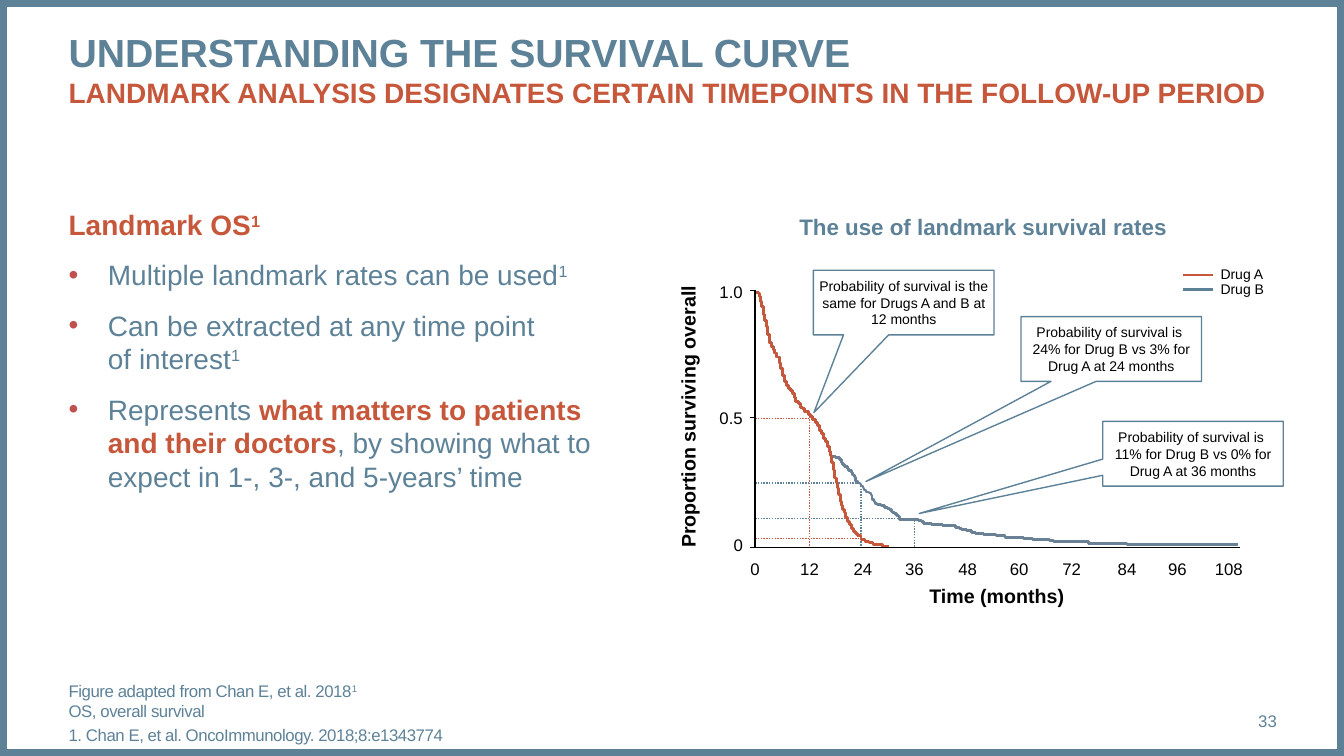
from dataclasses import dataclass
from itertools import chain

from lxml.etree import SubElement
from pptx import Presentation
from pptx.dml.color import RGBColor
from pptx.enum.dml import MSO_LINE
from pptx.enum.shapes import MSO_CONNECTOR, MSO_SHAPE
from pptx.enum.text import MSO_ANCHOR, PP_ALIGN
from pptx.oxml.ns import qn
from pptx.util import Cm, Pt


@dataclass(frozen=True)
class Theme:
    font: str = "Arial"
    blue: str = "5D8298"
    red: str = "C6573B"
    curve_blue: str = "698095"
    bullet: str = "C0504D"
    black: str = "000000"
    white: str = "FFFFFF"
    title: int = 28
    body: int = 20
    chart_title: int = 16
    axis_title: int = 14
    small: int = 12
    note: int = 10


THEME = Theme()
STRONG = {"bold": True, "color": THEME.red}
SUPER = ("1", {"raised": True})

# A paragraph is a list of runs; a run is (text, format changes).
TITLE = [[("UNDERSTANDING THE SURVIVAL CURVE\n", {}),
          ("LANDMARK ANALYSIS DESIGNATES CERTAIN TIMEPOINTS IN THE FOLLOW-UP PERIOD",
           {"size": THEME.body, "color": THEME.red})]]
BODY = [
    [("Landmark OS", STRONG), ("1", {**STRONG, "raised": True})],
    [("Multiple landmark rates can be used", {}), SUPER],
    [("Can be extracted at any time point \nof interest", {}), SUPER],
    [("Represents ", {}), ("what matters to patients and their doctors", STRONG),
     (", by showing what to expect in 1-, 3-, and 5-years’ time", {})],
]
FOOTNOTES = [
    [("Figure adapted from Chan E, et al. 2018", {}), SUPER, ("\nOS, overall survival", {})],
    [("1. Chan E, et al. OncoImmunology. 2018;8:e1343774", {})],
]
PAGE_NUMBER = "33"
CHART_TITLE = "The use of landmark survival rates"
TIME_TITLE = "Time (months)"
SURVIVAL_TITLE = "Proportion surviving overall"

# Plot positions count in steps of PLOT_UNIT from the top of the survival axis.
PLOT_UNIT = 0.0254
PLOT_LEFT, PLOT_TOP = 19.03, 7.32
TIME_AXIS, SURVIVAL_AXIS = 481, 255
MONTHS = [(0, 0), (12, 54), (24, 107), (36, 158), (48, 211), (60, 262),
          (72, 314), (84, 369), (96, 419), (108, 470)]
SURVIVAL = [("1.0", 0, -6), ("0.5", 126, 119), ("0", 255, 245)]  # label, tick, label top
LEGEND = [("Drug A", THEME.red, -15), ("Drug B", THEME.blue, -1)]
GUIDES = [  # colour, start, end
    (THEME.red, (54, 253), (54, 124)),
    (THEME.red, (0, 127), (55, 127)),
    (THEME.red, (0, 246), (105, 246)),
    (THEME.blue, (0, 191), (103, 191)),
    (THEME.blue, (0, 226), (142, 226)),
    (THEME.blue, (105, 253), (105, 194)),
    (THEME.blue, (158, 254), (158, 226)),
]
# Each step runs level to the first number, then drops to the second.
CURVE_START = (1, 2)
SHARED_STEPS = [
    (3, 3), (4, 6), (5, 11), (6, 16), (8, 24), (9, 30), (11, 36), (12, 44), (14, 52),
    (16, 56), (18, 59), (19, 62), (21, 66), (24, 72), (25, 77), (27, 84), (29, 90),
    (31, 94), (33, 97), (35, 99), (37, 102), (39, 106), (40, 110), (43, 112), (45, 116),
    (47, 117), (49, 120), (53, 123), (55, 125), (57, 128), (60, 131), (62, 134),
    (64, 139), (66, 142), (68, 147), (70, 150), (72, 155), (74, 160), (75, 164)]
DRUG_A_STEPS = [
    (76, 171), (78, 178), (79, 186), (81, 191), (82, 196), (83, 202), (85, 209),
    (86, 213), (87, 217), (89, 220), (90, 225), (92, 229), (94, 232), (96, 236),
    (98, 239), (100, 241), (102, 243), (105, 247), (109, 249), (113, 250), (117, 252),
    (126, 254), (133, 254)]
DRUG_B_STEPS = [
    (76, 165), (80, 166), (84, 168), (86, 171), (87, 173), (89, 175), (92, 177),
    (93, 179), (96, 181), (97, 183), (99, 185), (100, 189), (102, 191), (104, 192),
    (105, 194), (107, 196), (108, 198), (110, 200), (113, 201), (115, 203), (116, 207),
    (118, 209), (119, 211), (121, 212), (125, 213), (128, 215), (131, 216), (133, 217),
    (135, 219), (136, 220), (138, 221), (140, 223), (142, 224), (143, 227), (162, 228),
    (165, 229), (167, 231), (175, 232), (186, 233), (199, 235), (203, 236), (205, 237),
    (210, 238), (215, 240), (219, 241), (227, 242), (239, 243), (248, 245), (266, 246),
    (275, 247), (292, 248), (296, 249), (331, 251), (369, 252), (479, 252)]
CALLOUTS = [  # text, left, top, pointer
    ("Probability of survival is the same for Drugs A and B at 12 months",
     20.5, 6.81, (-0.497, 1.701)),
    ("Probability of survival is \n24% for Drug B vs 3% for Drug A at 24 months",
     25.73, 7.98, (-1.359, 2.049)),
    ("Probability of survival is \n11% for Drug B vs 0% for Drug A at 36 months",
     27.79, 10.62, (-1.517, 0.924)),
]

deck = Presentation()
deck.slide_width, deck.slide_height = Cm(33.87), Cm(19.05)
slide = deck.slides.add_slide(deck.slide_layouts[6])


def rgb(code):
    return RGBColor.from_string(code)


def plot_x(units):
    return PLOT_LEFT + units * PLOT_UNIT


def plot_y(units):
    return PLOT_TOP + units * PLOT_UNIT


def fill_text(frame, text, *, size, color=THEME.black, bold=False, align=PP_ALIGN.LEFT,
              anchor=MSO_ANCHOR.TOP, insets=(0, 0, 0, 0), leading=None,
              before=0, tracking=None, bulleted=False):
    """Write a string, or a list of paragraphs; bulleted skips the first one."""
    frame.word_wrap, frame.vertical_anchor = True, anchor
    frame.margin_left, frame.margin_top, frame.margin_right, frame.margin_bottom = map(Cm, insets)
    paragraphs = [[(text, {})]] if isinstance(text, str) else text
    for index, runs in enumerate(paragraphs):
        paragraph = frame.add_paragraph() if index else frame.paragraphs[0]
        paragraph.alignment, paragraph.space_before = align, Pt(before)
        if leading:
            paragraph.line_spacing = leading
        if bulleted and index:
            props = paragraph._p.get_or_add_pPr()
            props.set("marL", str(Cm(0.99)))
            props.set("indent", str(-Cm(0.99)))
            SubElement(SubElement(props, qn("a:buClr")), qn("a:srgbClr"), val=THEME.bullet)
            SubElement(props, qn("a:buFont"), typeface=THEME.font)
            SubElement(props, qn("a:buChar"), char="•")
        for words, changes in runs:
            for part, line in enumerate(words.split("\n")):
                if part:
                    paragraph.add_line_break()
                if not line:
                    continue
                run = paragraph.add_run()
                run.text = line
                run.font.name = THEME.font
                run.font.size = Pt(changes.get("size", size))
                run.font.bold = changes.get("bold", bold)
                run.font.color.rgb = rgb(changes.get("color", color))
                if changes.get("raised"):
                    run.font._element.set("baseline", "30000")
                if tracking:
                    run.font._element.set("spc", str(tracking))


def add_text(text, left, top, width, height, rotation=0, **style):
    box = slide.shapes.add_textbox(Cm(left), Cm(top), Cm(width), Cm(height))
    box.rotation = rotation
    fill_text(box.text_frame, text, **style)


def add_plot_line(start, end, color, weight=1, dash=None):
    ends = [Cm(place(units)) for point in (start, end)
            for place, units in zip((plot_x, plot_y), point)]
    line = slide.shapes.add_connector(MSO_CONNECTOR.STRAIGHT, *ends)
    line.line.color.rgb, line.line.width = rgb(color), Pt(weight)
    if dash:
        line.line.dash_style = dash
    SubElement(line._element.spPr, qn("a:effectLst"))


def add_curve(steps, color):
    levels = [CURVE_START[1]] + [level for _, level in steps]
    corners = chain.from_iterable(((x, above), (x, y)) for (x, y), above in zip(steps, levels))
    builder = slide.shapes.build_freeform(*CURVE_START, scale=float(Cm(PLOT_UNIT)))
    builder.add_line_segments(list(corners), close=False)
    curve = builder.convert_to_shape(Cm(PLOT_LEFT), Cm(PLOT_TOP))
    curve.fill.background()
    curve.line.color.rgb, curve.line.width = rgb(color), Pt(2)
    curve.shadow.inherit = False


border = slide.shapes.add_shape(MSO_SHAPE.RECTANGLE, 0, 0, deck.slide_width, deck.slide_height)
border.fill.background()
border.line.color.rgb, border.line.width = rgb(THEME.blue), Pt(10)
border.shadow.inherit = False

add_text(TITLE, 1.73, 0.71, 30.45, 2.39, size=THEME.title, color=THEME.blue, bold=True)
add_text(BODY, 1.73, 3.96, 13.61, 12.57, size=THEME.body, color=THEME.blue, before=12,
         insets=(0, 1.27, 0, 0), bulleted=True)
add_text(PAGE_NUMBER, 29.21, 17.65, 2.97, 1.02, size=THEME.small, color=THEME.blue,
         align=PP_ALIGN.RIGHT, anchor=MSO_ANCHOR.MIDDLE)
add_text(FOOTNOTES, 1.73, 17.7, 28.27, 1.02, size=THEME.small, color=THEME.blue, before=3,
         tracking=-30, anchor=MSO_ANCHOR.MIDDLE, insets=(0, 0, 0, 0.5))

axis_label = {"size": THEME.small, "leading": 0.9}
axis_title = {"size": THEME.axis_title, "leading": 0.9, "bold": True, "align": PP_ALIGN.CENTER}
for month, x in MONTHS:
    width = 0.32 * len(str(month))
    add_text(str(month), plot_x(x) - width / 2, 14.14, width, 0.46,
             align=PP_ALIGN.CENTER, **axis_label)
for share, tick, label_top in SURVIVAL:
    width = 0.32 * len(share)
    add_text(share, 18.72 - width, plot_y(label_top), width, 0.46,
             align=PP_ALIGN.RIGHT, **axis_label)
    add_plot_line((-5, tick), (0, tick), THEME.black)
add_text(TIME_TITLE, 23.12, 14.78, 4, 0.53, **axis_title)
add_text(SURVIVAL_TITLE, 13.87, 10.24, 7, 0.53, rotation=270, **axis_title)
add_text([[(drug, {})] for drug, _, _ in LEGEND], 30.76, 6.73, 1.5, 0.76, size=THEME.note,
         leading=0.9)
for _, color, y in LEGEND:
    add_plot_line((425, y), (454, y), color, weight=1.5)

for color, start, end in GUIDES:
    add_plot_line(start, end, color, dash=MSO_LINE.ROUND_DOT)
add_curve(SHARED_STEPS + DRUG_B_STEPS, THEME.curve_blue)
add_curve(SHARED_STEPS + DRUG_A_STEPS, THEME.red)
for axis_end in ((TIME_AXIS, SURVIVAL_AXIS), (0, 0)):
    add_plot_line((0, SURVIVAL_AXIS), axis_end, THEME.black)

for message, left, top, pointer in CALLOUTS:
    callout = slide.shapes.add_shape(MSO_SHAPE.RECTANGULAR_CALLOUT, Cm(left), Cm(top),
                                     Cm(4.55), Cm(1.63))
    callout.adjustments[0], callout.adjustments[1] = pointer
    callout.fill.solid()
    callout.fill.fore_color.rgb = rgb(THEME.white)
    callout.line.color.rgb, callout.line.width = rgb(THEME.blue), Pt(1)
    callout.shadow.inherit = False
    fill_text(callout.text_frame, message, size=THEME.note, align=PP_ALIGN.CENTER,
              anchor=MSO_ANCHOR.MIDDLE, insets=(0, 0.13, 0, 0.13))
add_text(CHART_TITLE, 17.22, 5.44, 15.11, 0.61, size=THEME.chart_title, color=THEME.blue,
         bold=True, align=PP_ALIGN.CENTER, leading=0.9)

deck.save("out.pptx")
